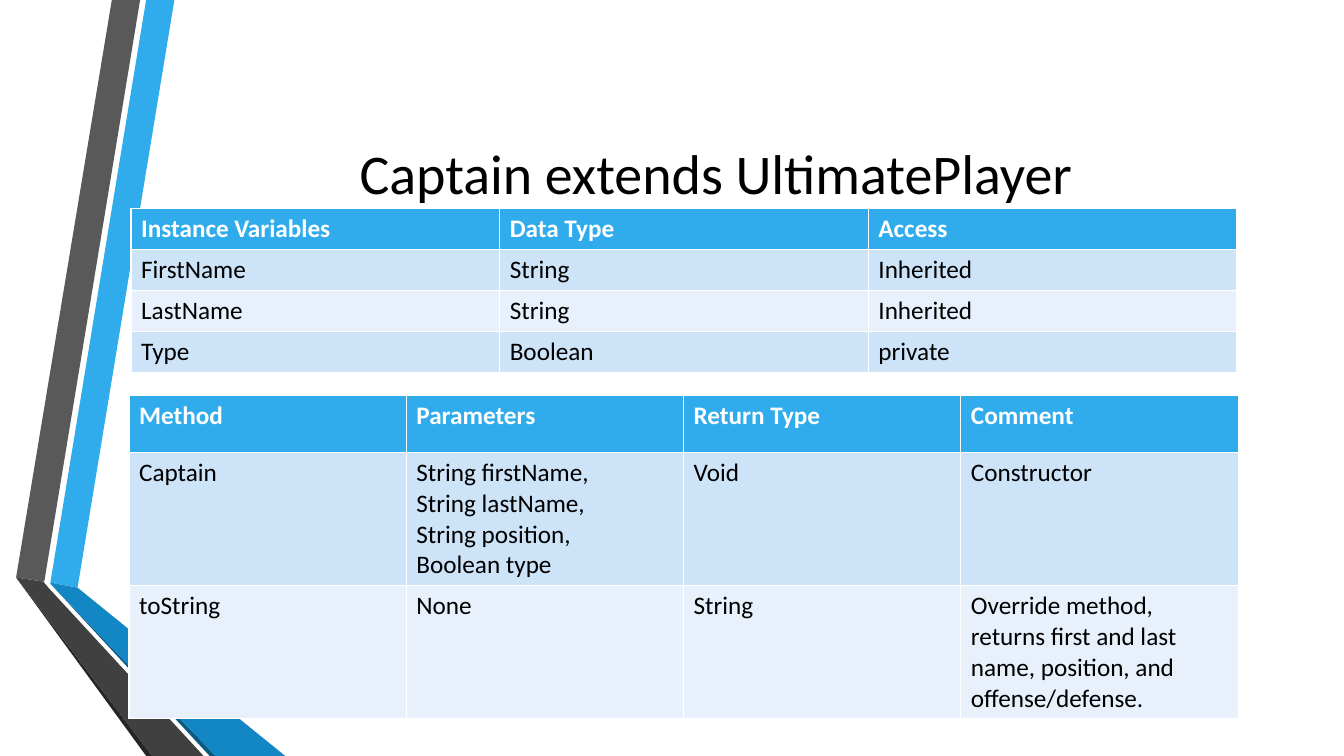
from pptx import Presentation
from pptx.dml.color import RGBColor
from pptx.enum import text as t
from pptx.util import Inches, Pt

BLUE, WHITE, BLACK = "30ACEC", "FFFFFF", "000000"
BANDS = ["CDE3F8", "E8F1FB"]


def paint(fill, color):
    fill.solid()
    fill.fore_color.rgb = RGBColor.from_string(color)


def write(frame, words, size=18, color=BLACK, bold=False, align=t.PP_ALIGN.LEFT):
    for i, line in enumerate(words.split("\n")):
        para = frame.add_paragraph() if i else frame.paragraphs[0]
        para.alignment = align
        run = para.add_run()
        run.text = line
        run.font.name = "Calibri"
        run.font.size = Pt(size)
        run.font.bold = bold
        paint(run.font.fill, color)


deck = Presentation()
deck.slide_width, deck.slide_height = Inches(13.33), Inches(7.5)
slide = deck.slides.add_slide(deck.slide_layouts[5])

# Folded ribbons on the left
ribbons = [
    (BLUE, [(0.5, 5.78), (0.77, 5.83), (1.73, 0), (1.45, 0)]),
    ("595959", [(1.39, 0), (1.11, 0), (0.16, 5.73), (0.44, 5.77)]),
    ("262626", [(0.16, 5.73), (1.45, 7.5), (1.51, 7.5)]),
    ("0C5A82", [(0.5, 5.79), (2.08, 7.5), (2.14, 7.5)]),
    ("1287C3", [(0.5, 5.79), (2.14, 7.5), (2.83, 7.5), (0.77, 5.83), (0.5, 5.78)]),
    ("404040", [(2.02, 7.5), (0.48, 5.83), (0.43, 5.77), (0.16, 5.73), (1.51, 7.5)]),
]
for color, dots in ribbons:
    dots = [(Inches(x), Inches(y)) for x, y in dots]
    pen = slide.shapes.build_freeform(*dots[0])
    pen.add_line_segments(dots[1:], close=True)
    band = pen.convert_to_shape()
    paint(band.fill, color)
    band.line.fill.background()
    band.shadow.inherit = False

# Title
title = slide.shapes.title
title.left, title.top = Inches(1.62), Inches(0.75)
title.width, title.height = Inches(10.96), Inches(1.92)
title.text_frame.vertical_anchor = t.MSO_ANCHOR.MIDDLE
write(title.text_frame, "Captain extends UltimatePlayer", size=40, align=t.PP_ALIGN.CENTER)

# Tables: left, top, width, row heights, rows
methods = [
    ["Method", "Parameters", "Return Type", "Comment"],
    ["Captain", "String firstName,\nString lastName,\nString position,\nBoolean type",
     "Void", "Constructor"],
    ["toString", "None", "String",
     "Override method, returns first and last name, position, and offense/defense."],
]
fields = [
    ["Instance Variables", "Data Type", "Access"],
    ["FirstName", "String", "Inherited"],
    ["LastName", "String", "Inherited"],
    ["Type", "Boolean", "private"],
]
tables = [
    (1.28, 3.92, 11, [0.57, 1.32, 1.32], methods),
    (1.3, 2.07, 10.97, [0.4] * 4, fields),
]
for left, top, width, heights, rows in tables:
    table = slide.shapes.add_table(
        len(rows), len(rows[0]), Inches(left), Inches(top),
        Inches(width), Inches(sum(heights))).table
    for r, row in enumerate(rows):
        table.rows[r].height = Inches(heights[r])
        for c, words in enumerate(row):
            cell = table.cell(r, c)
            head = r == 0
            paint(cell.fill, BLUE if head else BANDS[(r - 1) % 2])
            write(cell.text_frame, words, color=WHITE if head else BLACK, bold=head)

deck.save("out.pptx")
